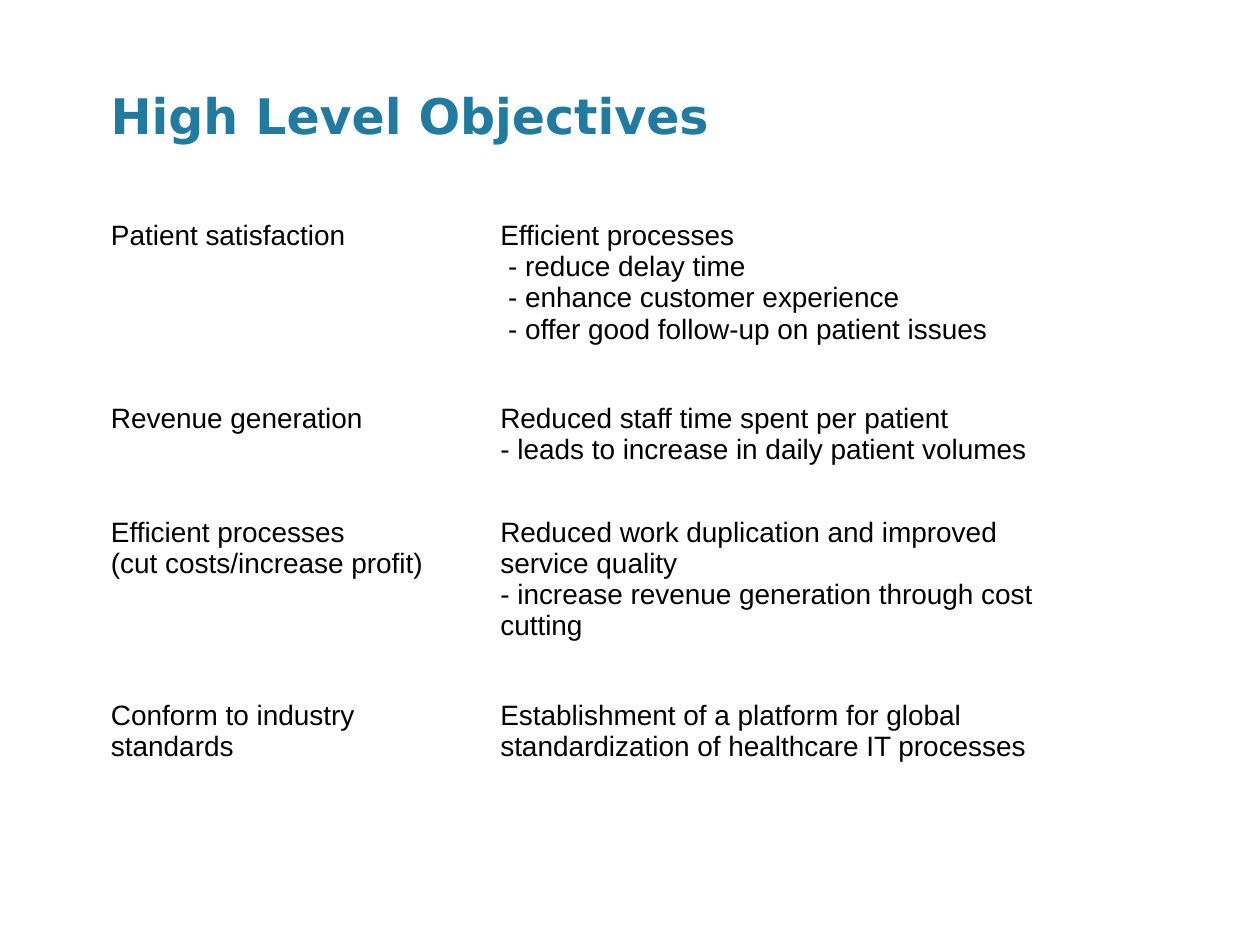
from pptx import Presentation
from pptx.dml.color import RGBColor
from pptx.enum.text import MSO_ANCHOR as Anchor
from pptx.util import Pt


def color(value):
    return RGBColor.from_string(value)


class Deck:
    TITLE = ("DejaVu Sans", 28, "217AA0", True)
    BODY = ("Arial", 16, "000000", False)

    def __init__(self, width, height):
        self.prs = Presentation()
        self.prs.slide_width, self.prs.slide_height = Pt(width), Pt(height)
        self.s = self.prs.slides.add_slide(self.prs.slide_layouts[6])

    def fill_text(self, tf, text, style):
        name, size, ink, bold = style
        tf.text = text
        tf.word_wrap = True
        for p in tf.paragraphs:
            p.font.size = Pt(size)
            for r in p.runs:
                r.font.name, r.font.size, r.font.bold = name, Pt(size), bold
                r.font.color.rgb = color(ink)

    def title(self, text, x, y, w, h):
        tf = self.s.shapes.add_textbox(Pt(x), Pt(y), Pt(w), Pt(h)).text_frame
        tf.vertical_anchor = Anchor.TOP
        self.fill_text(tf, text, self.TITLE)

    def table(self, rows, x, y, widths, heights):
        table = self.s.shapes.add_table(
            len(heights), len(widths), Pt(x), Pt(y),
            Pt(sum(widths)), Pt(sum(heights))).table
        table.first_row = table.horz_banding = False
        for column, w in zip(table.columns, widths):
            column.width = Pt(w)
        for row, h, texts in zip(table.rows, heights, rows):
            row.height = Pt(h)
            for cell, text in zip(row.cells, texts):
                cell.fill.background()
                cell.vertical_anchor = Anchor.TOP
                self.fill_text(cell.text_frame, text, self.BODY)


OBJECTIVES = [
    ("Patient satisfaction",
     "Efficient processes\n - reduce delay time\n"
     " - enhance customer experience\n"
     " - offer good follow-up on patient issues"),
    ("Revenue generation",
     "Reduced staff time spent per patient\n"
     "- leads to increase in daily patient volumes"),
    ("Efficient processes\n(cut costs/increase profit)",
     "Reduced work duplication and improved service quality\n"
     "- increase revenue generation through cost cutting"),
    ("Conform to industry standards",
     "Establishment of a platform for global standardization "
     "of healthcare IT processes"),
    ("", ""),
]


def main():
    deck = Deck(720, 540)
    left = 56.2
    tall, short = 104.5, 65.2

    # Title
    deck.title("High Level Objectives", left, 45.4, 628, 63)

    # Objectives and how they are met
    deck.table(OBJECTIVES, left, 122.4, [222.5, 345],
               [tall, short, tall, short, 26])

    deck.prs.save("out.pptx")


if __name__ == "__main__":
    main()
